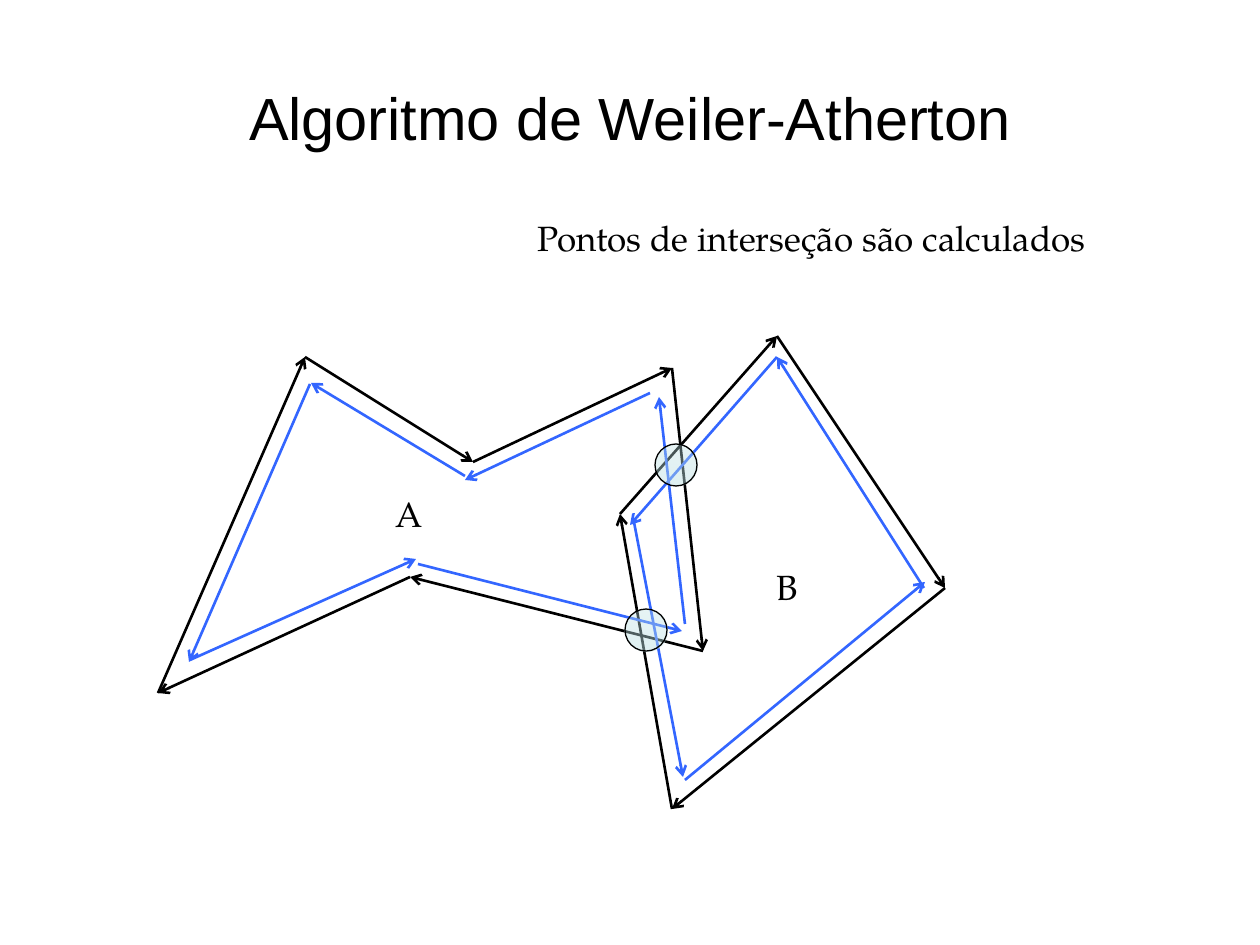
"""Builds the Weiler-Atherton slide with two directed polygons and their intersections."""
from pptx import Presentation
from pptx.dml.color import RGBColor
from pptx.enum.shapes import MSO_CONNECTOR as CONN, MSO_SHAPE as SHAPE
from pptx.enum.text import MSO_ANCHOR as ANCHOR, MSO_AUTO_SIZE as AUTO, PP_ALIGN as ALIGN
from pptx.oxml.ns import qn
from pptx.util import Emu, Pt
from lxml.etree import SubElement

SIZE = (1260, 945)
TITLE = ("Algoritmo de Weiler-Atherton", (63, 38, 1134, 157))
LABELS = [
    ("Pontos de interseção são calculados", (524, 210, 576, 54)),
    ("A", (383, 486, 53, 54)),
    ("B", (764, 559, 47, 54)),
]
POLYGONS = [
    [(158, 693), (305, 357), (473, 462), (672, 368), (703, 651), (410, 577)],
    [(620, 514), (777, 336), (945, 588), (672, 809)],
]
INNER_EDGES = [
    ((630, 525), (777, 357)), ((777, 357), (924, 588)),
    ((925, 582), (685, 780)), ((683, 777), (634, 522)),
    ((189, 662), (310, 384)), ((311, 383), (465, 476)),
    ((465, 480), (650, 393)), ((659, 397), (685, 624)),
    ((682, 631), (418, 564)), ((416, 559), (190, 660)),
]
CROSSINGS = [(646, 630), (676, 465)]
RADIUS = 21
BLACK, BLUE, AQUA = "000000", "3366FF", "BBE0E3"
ALPHAS = (35000, 48000)
FRAME = dict(margin_left=Emu(91440), margin_right=Emu(91440),
             margin_top=Emu(45720), margin_bottom=Emu(45720))


def px(v):
    return Emu(round(v * 914400 / 126))


def rgb(value):
    return RGBColor.from_string(value)


def set_all(obj, **values):
    for name, value in values.items():
        setattr(obj, name, value)


def write(sp, text, font, size, **frame):
    tf = sp.text_frame
    set_all(tf, **FRAME, **frame)
    p = tf.paragraphs[0]
    p.alignment = ALIGN.CENTER
    r = p.add_run()
    r.text = text
    set_all(r.font, name=font, size=Pt(size))
    r.font.color.rgb = rgb(BLACK)


def arrow(s, start, end, color, tip):
    c = s.shapes.add_connector(CONN.STRAIGHT, *map(px, start + end))
    c.line.width = Pt(1.5)
    c.line.color.rgb = rgb(color)
    SubElement(c.line._get_or_add_ln(), qn(f"a:{tip}"), type="arrow")
    SubElement(c._element.spPr, qn("a:effectLst"))


def crossing(s, x, y):
    box = (x - RADIUS, y - RADIUS, 2 * RADIUS, 2 * RADIUS)
    sp = s.shapes.add_shape(SHAPE.OVAL, *map(px, box))
    sp.shadow.inherit = False
    sp.fill.gradient()
    sp.fill.gradient_angle = 270
    for stop in sp.fill.gradient_stops:
        stop.color.rgb = rgb(AQUA)
    for clr, alpha in zip(sp._element.spPr.iter(qn("a:srgbClr")), ALPHAS):
        SubElement(clr, qn("a:alpha"), val=str(alpha))
    sp.line.color.rgb = rgb(BLACK)
    sp.line.width = Pt(0.75)


def main():
    prs = Presentation()
    set_all(prs, slide_width=px(SIZE[0]), slide_height=px(SIZE[1]))
    s = prs.slides.add_slide(prs.slide_layouts[5])

    text, box = TITLE
    title = s.shapes.title
    set_all(title, **dict(zip(("left", "top", "width", "height"), map(px, box))))
    write(title, text, "Arial", 34, vertical_anchor=ANCHOR.MIDDLE, word_wrap=True)

    for points in POLYGONS:
        for start, end in zip(points, points[1:] + points[:1]):
            arrow(s, start, end, BLACK, "tailEnd")
    for start, end in INNER_EDGES:
        arrow(s, start, end, BLUE, "headEnd")
    for x, y in CROSSINGS:
        crossing(s, x, y)
    for text, box in LABELS:
        sp = s.shapes.add_textbox(*map(px, box))
        write(sp, text, "TeX Gyre Pagella", 20, word_wrap=False,
              auto_size=AUTO.SHAPE_TO_FIT_TEXT)

    prs.save("out.pptx")


if __name__ == "__main__":
    main()
